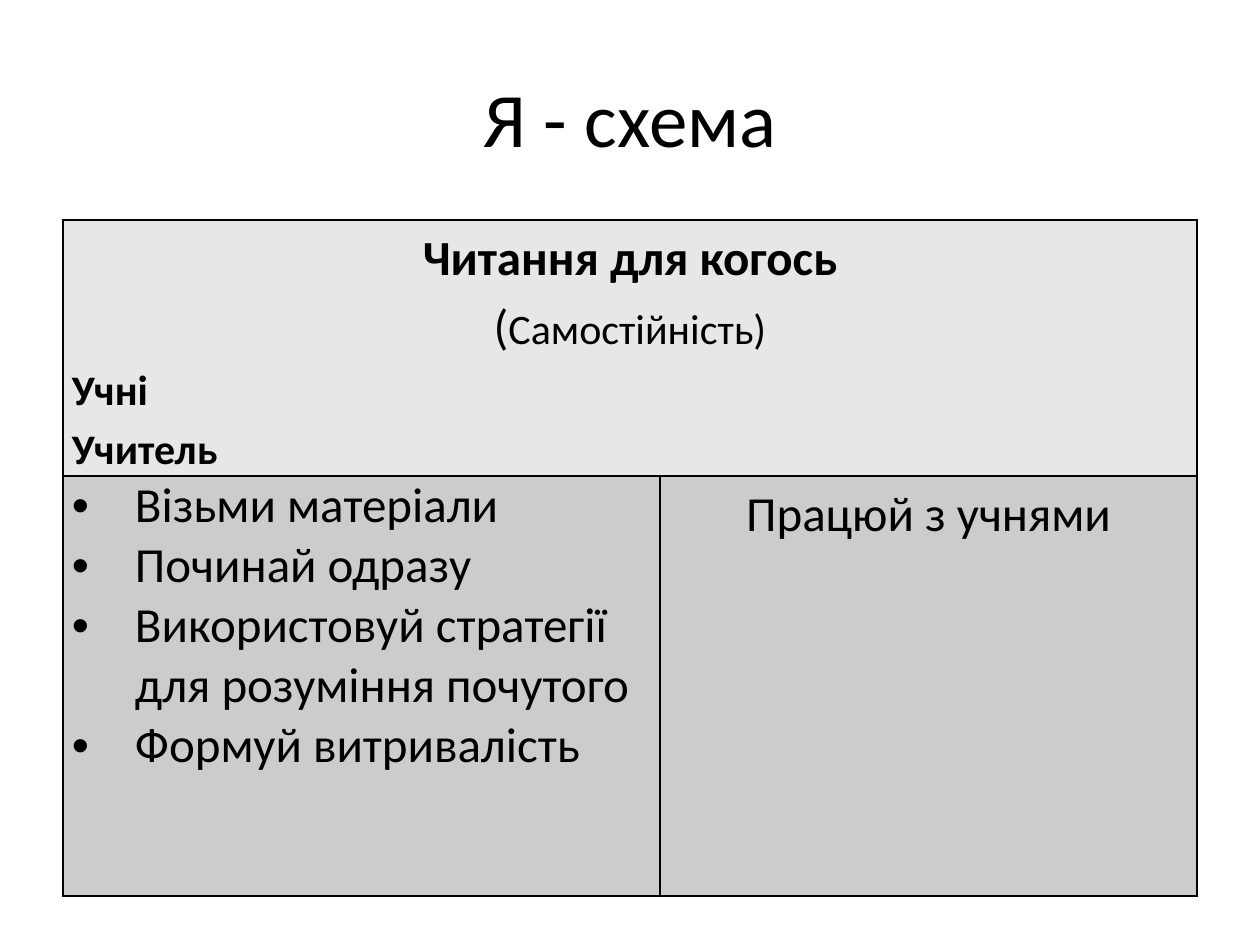
from lxml.etree import SubElement, Element
from pptx import Presentation
from pptx.dml.color import RGBColor
from pptx.enum.text import MSO_ANCHOR as ANCHOR, PP_ALIGN as ALIGN
from pptx.oxml.ns import qn
from pptx.util import Pt

PX = 914400 / 126
FONT = "Calibri"
COLORS = {"text": "000000", "border": "000000", "head": "E7E7E7", "body": "CCCCCC"}

TITLE = "Я - схема"
HEADING = [
    ([("Читання для когось", 28, True)], ALIGN.CENTER),
    ([("(", 28, False), ("Самостійність)", 24, False)], ALIGN.CENTER),
    ([("Учні", 24, True)], ALIGN.LEFT),
    ([("Учитель", 24, True)], ALIGN.LEFT),
]
STUDENTS = [
    "Візьми матеріали",
    "Починай одразу",
    "Використовуй стратегії для розуміння почутого",
    "Формуй витривалість",
]
TEACHER = "Працюй з учнями"

TITLE_BOX = (63, 38, 1134, 157)
TABLE_AT = (63, 220)
COLS = (597, 537)
ROWS = (256, 420)
PAD = 9
INDENT = 63


def px(n):
    return round(n * PX)


def add_text(tf, text, size=28, bold=False, align=ALIGN.LEFT, spacing=None, bullet=False):
    runs = [(text, size, bold)] if isinstance(text, str) else text
    p = tf.paragraphs[0] if not tf.text else tf.add_paragraph()
    p.alignment = align
    if spacing:
        p.line_spacing = spacing
    if bullet:
        pPr = p._p.get_or_add_pPr()
        pPr.set("marL", str(px(INDENT)))
        pPr.set("indent", str(-px(INDENT)))
        SubElement(pPr, qn("a:buFont"), typeface="Arial")
        SubElement(pPr, qn("a:buChar"), char="•")
    for part, pt, strong in runs:
        r = p.add_run()
        r.text = part
        r.font.name = FONT
        r.font.size = Pt(pt)
        r.font.bold = strong
        r.font.color.rgb = RGBColor.from_string(COLORS["text"])


def style_cell(cell, fill):
    cell.margin_left = cell.margin_right = px(PAD)
    cell.margin_top = cell.margin_bottom = 0
    cell.fill.solid()
    cell.fill.fore_color.rgb = RGBColor.from_string(COLORS[fill])
    tcPr = cell._tc.get_or_add_tcPr()
    for i, side in enumerate("LRTB"):
        ln = Element(qn(f"a:ln{side}"), w=str(Pt(1)))
        SubElement(SubElement(ln, qn("a:solidFill")), qn("a:srgbClr"), val=COLORS["border"])
        tcPr.insert(i, ln)


prs = Presentation()
prs.slide_width, prs.slide_height = px(1260), px(945)
s = prs.slides.add_slide(prs.slide_layouts[6])

tf = s.shapes.add_textbox(*map(px, TITLE_BOX)).text_frame
tf.word_wrap = True
tf.vertical_anchor = ANCHOR.MIDDLE
add_text(tf, TITLE, size=44, align=ALIGN.CENTER)

table = s.shapes.add_table(
    len(ROWS), len(COLS), *map(px, (*TABLE_AT, sum(COLS), sum(ROWS)))
).table
for col, width in zip(table.columns, COLS):
    col.width = px(width)
for row, height, fill in zip(table.rows, ROWS, ("head", "body")):
    row.height = px(height)
    for cell in row.cells:
        style_cell(cell, fill)

heading, students, teacher = table.cell(0, 0), table.cell(1, 0), table.cell(1, 1)
heading.merge(table.cell(0, 1))
for runs, align in HEADING:
    add_text(heading.text_frame, runs, align=align, spacing=1.15)
for item in STUDENTS:
    add_text(students.text_frame, item, bullet=True)
add_text(teacher.text_frame, TEACHER, align=ALIGN.CENTER, spacing=1.15)

prs.save("out.pptx")
